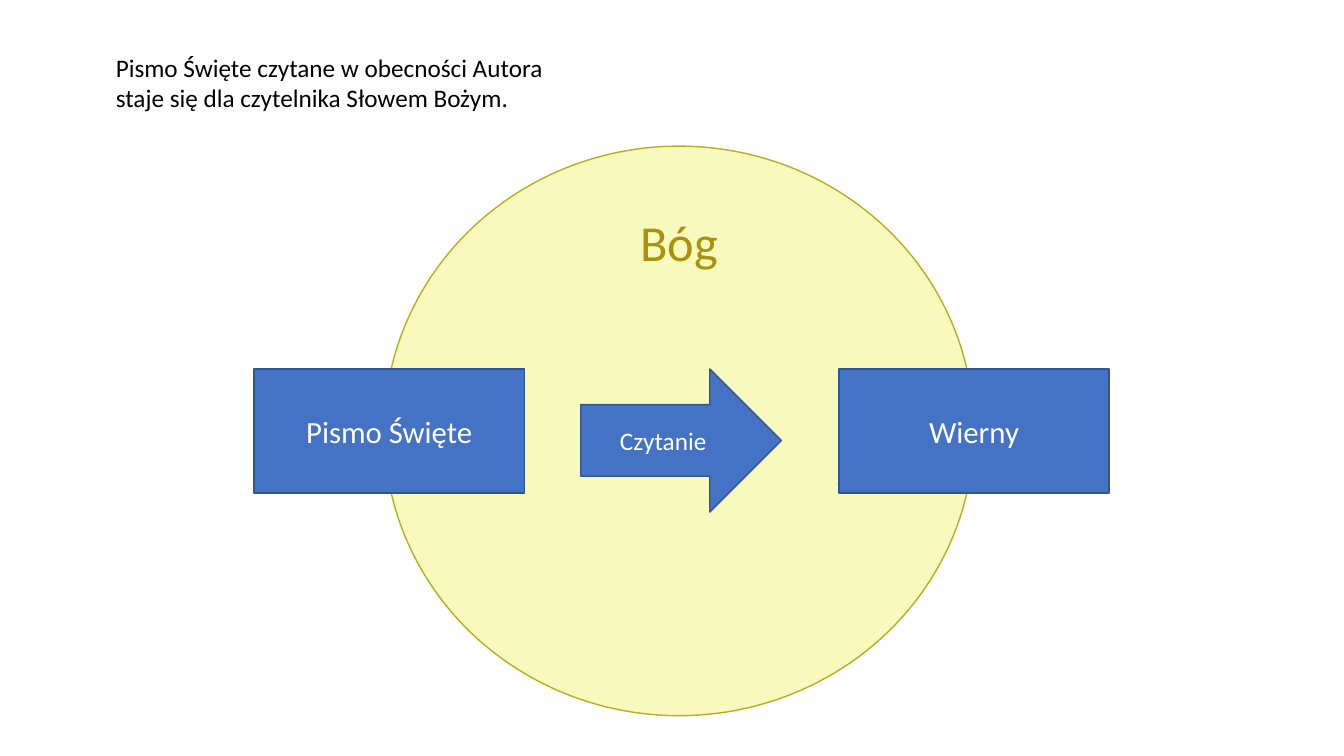
"""Build a slide showing Scripture read by a believer in the presence of God."""
import pptx
import pptx.dml.color
import pptx.enum.shapes
import pptx.enum.text
import pptx.util

Inches = pptx.util.Inches
RGBColor = pptx.dml.color.RGBColor
Shapes = pptx.enum.shapes.MSO_SHAPE
Align = pptx.enum.text.PP_ALIGN
Anchor = pptx.enum.text.MSO_ANCHOR

BLACK = RGBColor(0x00, 0x00, 0x00)
WHITE = RGBColor(0xFF, 0xFF, 0xFF)
BLUE = RGBColor(0x44, 0x72, 0xC4)
DARK_BLUE = RGBColor(0x32, 0x54, 0x91)
PALE_YELLOW = RGBColor(0xF8, 0xF9, 0xBC)
OLIVE = RGBColor(0xBB, 0xAD, 0x1D)
GOLD = RGBColor(0xA9, 0x92, 0x0F)


class Diagram:
    """Hold the style and the current slide."""

    font = "Calibri"
    line_width = pptx.util.Pt(1)

    def __init__(self, slide):
        """Keep the slide to draw on."""
        self.slide = slide

    def add_label(self, shape, text, size, color, align, anchor):
        """Put one formatted run into a shape."""
        frame = shape.text_frame
        frame.word_wrap = True
        frame.vertical_anchor = anchor
        paragraph = frame.paragraphs[0]
        paragraph.alignment = align
        run = paragraph.add_run()
        run.text = text
        run.font.name = self.font
        run.font.size = pptx.util.Pt(size)
        run.font.color.rgb = color

    def add_shape(self, kind, box, fill, line):
        """Add a filled and outlined preset shape."""
        shape = self.slide.shapes.add_shape(kind, *map(Inches, box))
        shape.shadow.inherit = False
        shape.fill.solid()
        shape.fill.fore_color.rgb = fill
        shape.line.color.rgb = line
        shape.line.width = self.line_width
        return shape

    def add_block(self, kind, box, text, size):
        """Add a blue shape with a centred white label."""
        shape = self.add_shape(kind, box, BLUE, DARK_BLUE)
        self.add_label(shape, text, size, WHITE, Align.CENTER, Anchor.MIDDLE)

    def add_text(self, box, text, size, color, align=Align.LEFT, inset=None):
        """Add a wrapping text box, with equal insets if given."""
        shape = self.slide.shapes.add_textbox(*map(Inches, box))
        self.add_label(shape, text, size, color, align, Anchor.TOP)
        if inset is not None:
            frame = shape.text_frame
            frame.margin_left = frame.margin_right = Inches(inset)
            frame.margin_top = frame.margin_bottom = Inches(inset)


def main():
    """Draw the slide and save it."""
    presentation = pptx.Presentation()
    presentation.slide_width = Inches(13.33)
    presentation.slide_height = Inches(7.5)
    diagram = Diagram(presentation.slides.add_slide(presentation.slide_layouts[6]))

    diagram.add_shape(Shapes.OVAL, (3.81, 1.45, 5.85, 5.65), PALE_YELLOW, OLIVE)
    diagram.add_text((4.67, 2.05, 4.13, 1.29), "Bóg", 36, GOLD, Align.CENTER, 0.04)
    diagram.add_text(
        (1.05, 0.47, 4.47, 0.71),
        "Pismo Święte czytane w obecności Autora staje się dla czytelnika Słowem Bożym.",
        18,
        BLACK,
    )

    row_top = 3.66
    for left, label in ((2.52, "Pismo Święte"), (8.32, "Wierny")):
        diagram.add_block(Shapes.RECTANGLE, (left, row_top, 2.68, 1.23), label, 22)
    diagram.add_block(Shapes.RIGHT_ARROW, (5.76, row_top, 1.99, 1.42), "Czytanie", 18)

    presentation.save("out.pptx")


if __name__ == "__main__":
    main()
